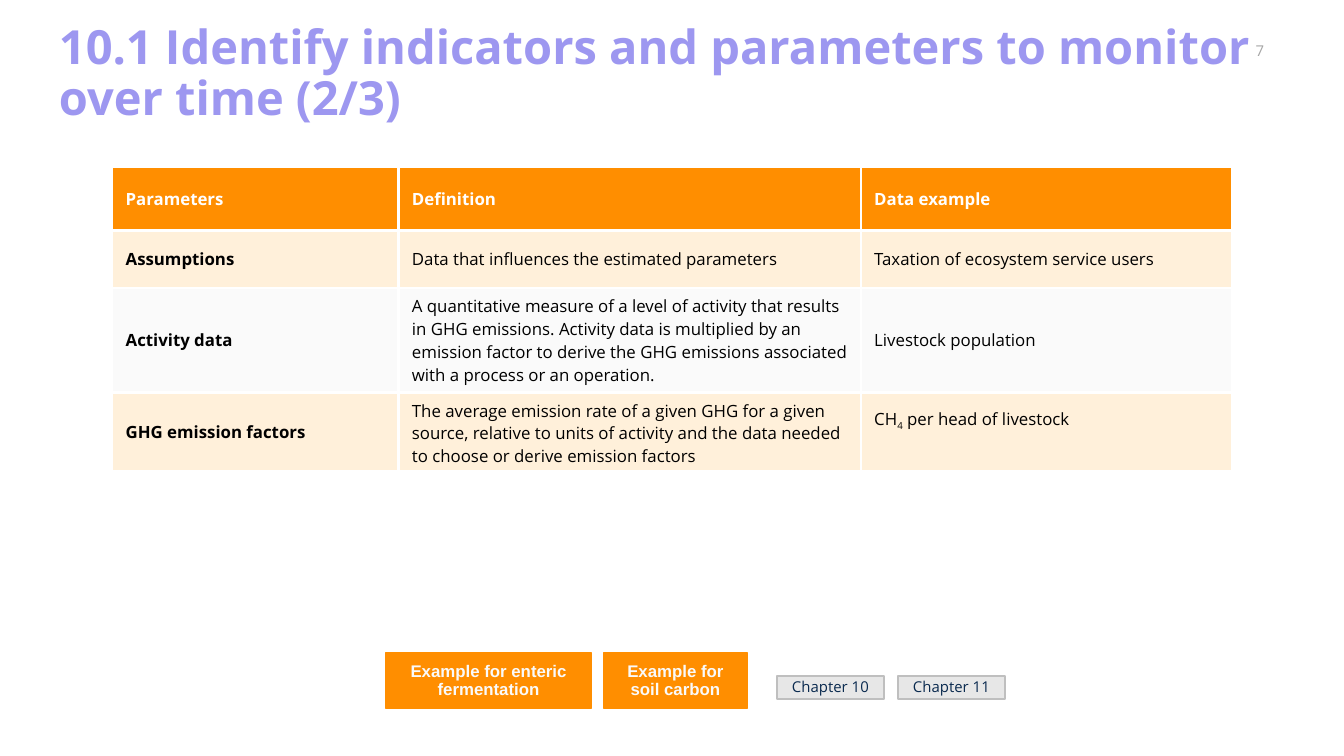
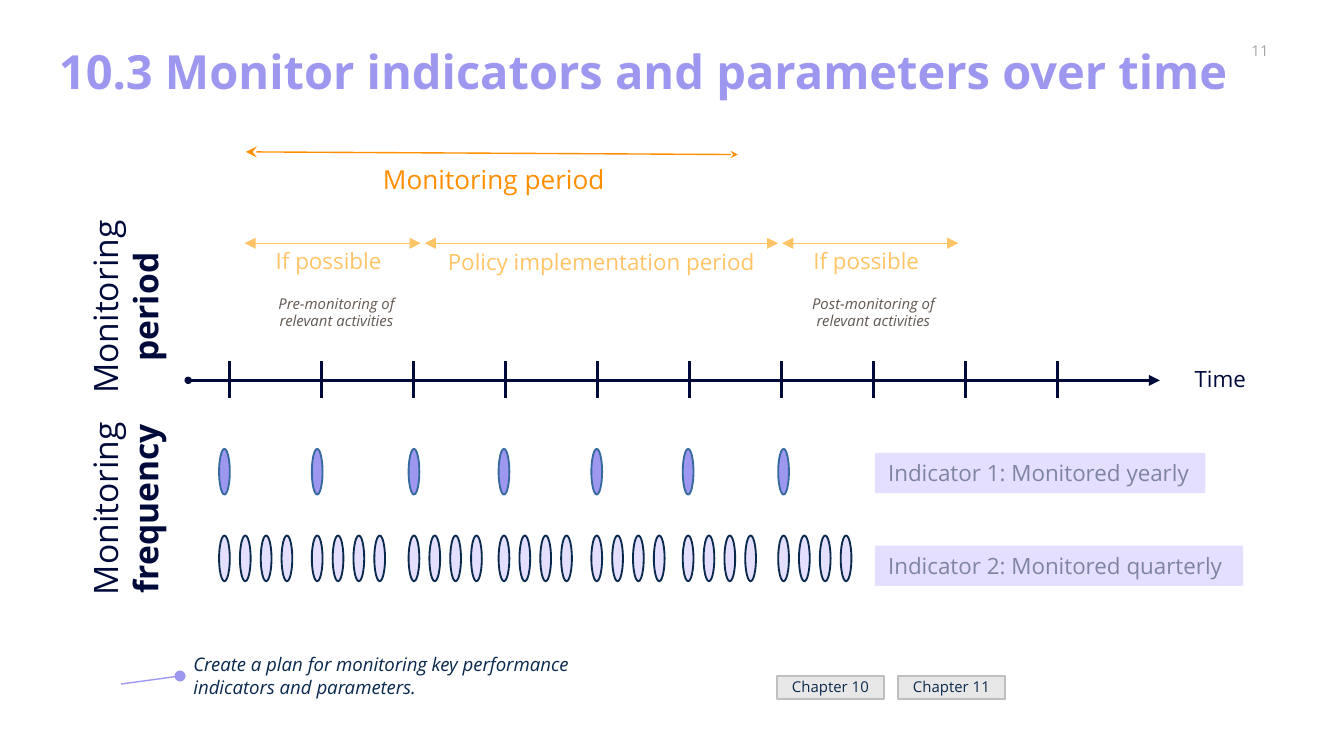
"""Builds two slides on monitoring indicators and parameters over time."""
from dataclasses import dataclass, replace
from itertools import product
from typing import NamedTuple, Optional

from lxml.etree import SubElement
from pptx import Presentation
from pptx.dml.color import RGBColor
from pptx.enum.shapes import MSO_CONNECTOR, MSO_SHAPE
from pptx.enum.text import MSO_ANCHOR, PP_ALIGN
from pptx.oxml import parse_xml
from pptx.oxml.ns import nsdecls, qn
from pptx.util import Inches, Pt

LILAC, PALE_LILAC, ORANGE, AMBER = "9D97F0", "E4DEFF", "FF8E00", "FFC465"
NAVY, INK, OFF_WHITE, WHITE, CREAM = "000A3A", "09294E", "FAFAFA", "FFFFFF", "FFF0DA"
TOP, MIDDLE = MSO_ANCHOR.TOP, MSO_ANCHOR.MIDDLE
LEFT, CENTER = PP_ALIGN.LEFT, PP_ALIGN.CENTER


class Area(NamedTuple):
    """Place and size in columns and rows of a tenth of an inch."""
    col: float
    row: float
    cols: float
    rows: float


@dataclass(frozen=True)
class Style:
    """Look of a text."""
    size: float
    color: str
    bold: bool = False
    italic: bool = False
    align: PP_ALIGN = LEFT
    spacing: float = 1.0
    anchor: MSO_ANCHOR = TOP
    font: str = "Open Sans"
    bold_end: bool = False


@dataclass(frozen=True)
class Label:
    """Text with an optional filled box; a bar in the text parts its runs."""
    text: str
    area: Area
    style: Style
    fill: Optional[str] = None
    line: Optional[str] = None
    width: float = 1
    turn: float = 0
    inset: bool = True


class Line(NamedTuple):
    """Straight line with optional ends."""
    x1: float
    y1: float
    x2: float
    y2: float
    color: str
    width: float = 0.75
    head: Optional[str] = None
    tail: Optional[str] = None
    head_size: str = "med"


TITLE = Style(25.2, LILAC, bold=True, spacing=0.9, anchor=MIDDLE)
NUMBER = Style(8, "A5A5A5", align=CENTER, anchor=MIDDLE)
BUTTON = Style(9, OFF_WHITE, bold=True, align=CENTER, spacing=0.9, anchor=MIDDLE, font="Arial")
CHAPTER = Style(8, INK, align=CENTER, spacing=0.9, anchor=MIDDLE)
BODY = Style(9, "000000")
BODY_BOLD = replace(BODY, bold=True)
HEADER = replace(BODY_BOLD, color=WHITE)
AXIS = Style(12, NAVY)
SIDE = Style(18, NAVY, align=CENTER, bold_end=True)
INDICATOR = Style(12, "7E84A1")
PERIOD = Style(14, ORANGE, align=CENTER)
PHASE = Style(12, AMBER, align=CENTER)
NOTE = Style(8, "625852", italic=True, align=CENTER)
PLAN = Style(10, INK, italic=True, anchor=MIDDLE)

TABLE_COLS = (21.3, 34.4, 27.6)
TABLE_ROWS = (4.75, 4.3, 7.75, 5.9)
TABLE_AREA = Area(8.35, 12.4, sum(TABLE_COLS), sum(TABLE_ROWS))
TABLE_FILLS = (ORANGE, CREAM, OFF_WHITE, CREAM)
TABLE_TEXT = (
    ("Parameters", "Definition", "Data example"),
    ("Assumptions", "Data that influences the estimated parameters",
     "Taxation of ecosystem service users"),
    ("Activity data",
     "A quantitative measure of a level of activity that results in GHG emissions. "
     "Activity data is multiplied by an emission factor to derive the GHG emissions "
     "associated with a process or an operation.", "Livestock population"),
    ("GHG emission factors",
     "The average emission rate of a given GHG for a given source, relative to units of "
     "activity and the data needed to choose or derive emission factors",
     "CH|4| per head of livestock"),
)
EXAMPLES = (
    Label("Example for soil carbon", Area(44.9, 48.6, 10.7, 4.1), BUTTON, ORANGE, ORANGE, 0.75),
    Label("Example for enteric fermentation", Area(28.7, 48.6, 15.3, 4.1), BUTTON,
          ORANGE, ORANGE, 0.75),
)
TIMELINE_LABELS = (
    Label("Time", Area(87.9, 26.7, 8, 3), AXIS),
    Label("Monitoring |period", Area(0.9, 19.3, 16.9, 7.1), SIDE, turn=270),
    Label("Monitoring |frequency", Area(0.9, 34.3, 16.9, 7.1), SIDE, turn=270),
    Label("Indicator 1: Monitored yearly", Area(65.1, 33.7, 24.6, 3), INDICATOR, PALE_LILAC),
    Label("Indicator 2: Monitored quarterly", Area(65.1, 40.6, 27.4, 3), INDICATOR, PALE_LILAC),
    Label("Create a plan for monitoring key performance indicators and parameters.",
          Area(13.4, 47.8, 33.8, 4.9), PLAN),
    Label("Pre-monitoring of relevant activities", Area(18.5, 21.4, 13.1, 3.7), NOTE),
    Label("Post-monitoring of relevant activities", Area(59, 21.4, 12, 3.7), NOTE),
    Label("Monitoring period", Area(18.7, 11.7, 36.1, 3.4), PERIOD),
    Label("Policy implementation period", Area(31.6, 18, 26.3, 3), PHASE),
    Label("If possible", Area(17.9, 17.9, 13.1, 3), PHASE),
    Label("If possible", Area(57.9, 17.9, 13.1, 3), PHASE),
)
TICKS = 10
TICK_START, TICK_STEP = 17.1, 6.84
PHASE_SPANS = ((31.6, 57.9), (18.2, 31.3), (58.2, 71.3))
TIMELINE_LINES = (
    Line(14, 28.3, 86.3, 28.3, NAVY, 1.5, "oval", "triangle", "sm"),
    *(Line(x, 26.9, x, 29.6, NAVY, 1.5)
      for x in (TICK_START + i * TICK_STEP for i in range(TICKS))),
    Line(54.9, 11.5, 18.3, 11.3, ORANGE, 0.75, "stealth", "stealth", "sm"),
    *(Line(a, 18.1, b, 18.1, AMBER, 0.75, "triangle", "triangle") for a, b in PHASE_SPANS),
    Line(9, 50.9, 13.4, 50.3, LILAC, tail="oval"),
)
YEARS = (16.3, 23.2, 30.4, 37.1, 44, 50.8, 57.9)
QUARTERS, QUARTER_STEP = 4, 1.55
MARK_COLS, MARK_ROWS = 0.8, 3.4


def rgb(color: str) -> RGBColor:
    """Turn a hex string into a colour."""
    return RGBColor.from_string(color)


def grid(*units: float) -> list:
    """Turn grid units into lengths."""
    return [Inches(u / 10) for u in units]


def write(tf, text: str, style: Style) -> None:
    """Fill a text frame with one styled paragraph."""
    first, *rest = text.split("|")
    tf.text = first
    p = tf.paragraphs[0]
    for part in rest:
        p.add_run().text = part
    p.alignment, p.line_spacing = style.align, style.spacing
    for r in p.runs:
        f = r.font
        f.name, f.size, f.bold, f.italic = style.font, Pt(style.size), style.bold, style.italic
        f.color.rgb = rgb(style.color)
    if style.bold_end:
        p.runs[-1].font.bold = True


def add_box(s, kind: MSO_SHAPE, area: Area, fill: str, line: Optional[str], width: float):
    """Draw a flat preset shape."""
    sp = s.shapes.add_shape(kind, *grid(*area))
    sp.shadow.inherit = False
    sp.fill.solid()
    sp.fill.fore_color.rgb = rgb(fill)
    if line:
        sp.line.color.rgb = rgb(line)
        sp.line.width = Pt(width)
    else:
        sp.line.fill.background()
    return sp


def add_label(s, label: Label) -> None:
    """Draw a label as a text box or a filled rectangle."""
    if label.fill:
        sp = add_box(s, MSO_SHAPE.RECTANGLE, label.area, label.fill, label.line, label.width)
    else:
        sp = s.shapes.add_textbox(*grid(*label.area))
    sp.rotation = label.turn
    tf = sp.text_frame
    tf.word_wrap, tf.vertical_anchor = True, label.style.anchor
    if not label.inset:
        tf.margin_left = tf.margin_right = tf.margin_top = tf.margin_bottom = 0
    write(tf, label.text, label.style)


def add_line(s, line: Line) -> None:
    """Draw a connector with its ends."""
    cx = s.shapes.add_connector(MSO_CONNECTOR.STRAIGHT, *grid(*line[:4]))
    cx.line.color.rgb = rgb(line.color)
    cx.line.width = Pt(line.width)
    props = cx._element.spPr
    ends = (("a:headEnd", line.head, line.head_size), ("a:tailEnd", line.tail, "med"))
    for tag, end, size in ends:
        if end:
            SubElement(props.find(qn("a:ln")), qn(tag), type=end, w=size, len=size)
    SubElement(props, qn("a:effectLst"))


def add_borders(cell) -> None:
    """Give a cell white borders on all sides."""
    props = cell._tc.get_or_add_tcPr()
    for i, side in enumerate("LRTB"):
        props.insert(i, parse_xml(
            f'<a:ln{side} {nsdecls("a")} w="{Pt(1.5)}"><a:solidFill>'
            f'<a:srgbClr val="{WHITE}"/></a:solidFill></a:ln{side}>'))


def add_parameters_table(s) -> None:
    """Draw the table of parameters."""
    table = s.shapes.add_table(len(TABLE_ROWS), len(TABLE_COLS), *grid(*TABLE_AREA)).table
    for column, width in zip(table.columns, grid(*TABLE_COLS)):
        column.width = width
    for row, height in zip(table.rows, grid(*TABLE_ROWS)):
        row.height = height
    for i, j in product(range(len(TABLE_ROWS)), range(len(TABLE_COLS))):
        cell = table.cell(i, j)
        cell.vertical_anchor = MIDDLE
        cell.fill.solid()
        cell.fill.fore_color.rgb = rgb(TABLE_FILLS[i])
        add_borders(cell)
        style = HEADER if i == 0 else BODY if j else BODY_BOLD
        write(cell.text_frame, TABLE_TEXT[i][j], style)
    formula = table.cell(3, 2)
    formula.margin_bottom = Inches(0.23)
    formula.text_frame.paragraphs[0].runs[1]._r.get_or_add_rPr().set("baseline", "-25000")


def add_marks(s) -> None:
    """Draw the yearly and quarterly monitoring marks."""
    for year in YEARS:
        add_box(s, MSO_SHAPE.OVAL, Area(year, 33.4, MARK_COLS, MARK_ROWS), LILAC, "366A9F", 1)
        for q in range(QUARTERS):
            area = Area(year + q * QUARTER_STEP, 39.85, MARK_COLS, MARK_ROWS)
            add_box(s, MSO_SHAPE.OVAL, area, PALE_LILAC, INK, 1)


def add_page(prs, title: str, number: int):
    """Add a slide with its title, number and chapter buttons."""
    s = prs.slides.add_slide(prs.slide_layouts[6])
    add_label(s, Label(str(number), Area(89.8, 2.65, 7.9, 2.2), NUMBER, inset=False))
    add_label(s, Label(title, Area(3.4, 2.4, 93.2, 6.3), TITLE))
    for i, chapter in enumerate((10, 11)):
        area = Area(57.8 + 9 * i, 50.3, 8, 1.7)
        add_label(s, Label(f"Chapter {chapter}", area, CHAPTER, "E7E7E7", "BFBFBF"))
    return s


def main() -> None:
    """Build and save the slides."""
    prs = Presentation()
    prs.slide_width, prs.slide_height = grid(100, 56.25)

    s = add_page(prs, "10.1 Identify indicators and parameters to monitor over time (2/3)", 7)
    add_parameters_table(s)
    for label in EXAMPLES:
        add_label(s, label)

    s = add_page(prs, "10.3 Monitor indicators and parameters over time", 11)
    for line in TIMELINE_LINES:
        add_line(s, line)
    add_marks(s)
    for label in TIMELINE_LABELS:
        add_label(s, label)

    prs.save("out.pptx")


if __name__ == "__main__":
    main()
